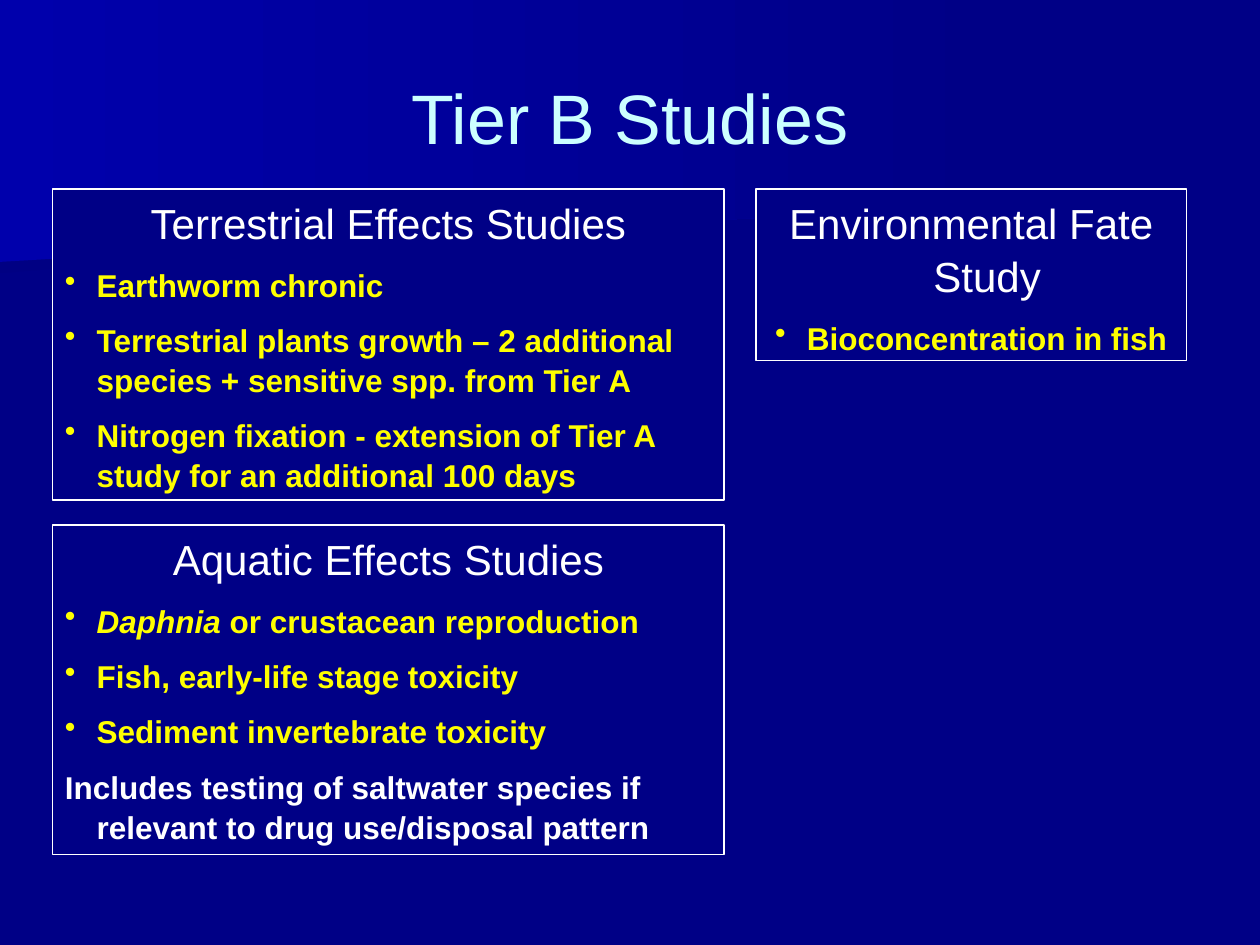
from dataclasses import dataclass

from lxml.etree import SubElement
from pptx import Presentation
from pptx.dml.color import RGBColor
from pptx.enum.shapes import MSO_SHAPE as Shape
from pptx.enum.text import MSO_ANCHOR as Anchor, PP_ALIGN as Align
from pptx.oxml.ns import qn
from pptx.util import Cm, Pt

NAVY, WHITE, YELLOW, CYAN = "000086", "FFFFFF", "FFFF00", "CCFFFF"
HEADING = dict(name="Arial", size=Pt(24), bold=False)
ITEM = dict(name="Arial", size=Pt(18), bold=True)
TITLE = dict(name="Arial", size=Pt(40), bold=False)
INDENT = Cm(0.64)


@dataclass
class Item:
    text: str
    italic: str = ""  # leading words set in italics
    color: str = YELLOW
    bullet: bool = True


@dataclass
class Panel:
    heading: str
    box: tuple[float, float, float, float]
    items: list[Item]
    align: Align = Align.LEFT


@dataclass
class Band:
    points: list[tuple[float, float]]
    start: str


def rgb(color: str) -> RGBColor:
    return RGBColor.from_string(color)


def add_run(p, text: str, fmt: dict, color: str, italic: bool = False) -> None:
    r = p.add_run()
    r.text = text
    for key, value in fmt.items():
        setattr(r.font, key, value)
    r.font.italic = italic
    r.font.color.rgb = rgb(color)


def format_paragraph(p, align: Align, bullet: bool) -> None:
    p.alignment = align
    p.space_before = Pt(9)
    p.line_spacing = 1.05
    pPr = p._p.get_or_add_pPr()
    pPr.set("marL", str(INDENT))
    pPr.set("indent", str(-INDENT))
    if bullet:
        SubElement(pPr, qn("a:buChar")).set("char", "•")
    else:
        SubElement(pPr, qn("a:buNone"))


def add_band(s, band: Band) -> None:
    points = [(Cm(x), Cm(y)) for x, y in band.points]
    builder = s.shapes.build_freeform(*points[0])
    builder.add_line_segments(points[1:], close=True)
    sp = builder.convert_to_shape()
    sp.shadow.inherit = False
    sp.line.fill.background()
    sp.fill.gradient()
    sp.fill.gradient_angle = 0
    for stop, color in zip(sp.fill.gradient_stops, (band.start, NAVY)):
        stop.color.rgb = rgb(color)


def add_panel(s, panel: Panel) -> None:
    sp = s.shapes.add_shape(Shape.RECTANGLE, *map(Cm, panel.box))
    sp.shadow.inherit = False
    sp.fill.solid()
    sp.fill.fore_color.rgb = rgb(NAVY)
    sp.line.color.rgb = rgb(WHITE)
    sp.line.width = Pt(1)
    tf = sp.text_frame
    tf.word_wrap = True
    tf.vertical_anchor = Anchor.TOP

    p = tf.paragraphs[0]
    format_paragraph(p, Align.CENTER, bullet=False)
    add_run(p, panel.heading, HEADING, WHITE)
    for item in panel.items:
        p = tf.add_paragraph()
        format_paragraph(p, panel.align, item.bullet)
        if item.italic:
            add_run(p, item.italic, ITEM, item.color, italic=True)
        add_run(p, item.text, ITEM, item.color)


BANDS = [
    Band([(19.76, 3.89), (0, 5.51), (0, 2.57), (19.79, 2.57)], "000083"),
    Band([(20.12, 4.11), (0, 5.28), (0, 0), (20.12, 0)], "0000AC"),
]
LEFT, TOP, WIDTH = 1.06, 3.81, 13.54
PANELS = [
    Panel("Aquatic Effects Studies", (LEFT, 10.58, WIDTH, 6.65), [
        Item(" or crustacean reproduction", italic="Daphnia"),
        Item("Fish, early-life stage toxicity"),
        Item("Sediment invertebrate toxicity"),
        Item("Includes testing of saltwater species if relevant to drug "
             "use/disposal pattern", color=WHITE, bullet=False),
    ]),
    Panel("Environmental Fate Study", (15.24, TOP, 8.68, 3.46), [
        Item("Bioconcentration in fish"),
    ], Align.CENTER),
    Panel("Terrestrial Effects Studies", (LEFT, TOP, WIDTH, 6.27), [
        Item("Earthworm chronic"),
        Item("Terrestrial plants growth – 2 additional species + sensitive "
             "spp. from Tier A"),
        Item("Nitrogen fixation - extension of Tier A study for an "
             "additional 100 days"),
    ]),
]


def main() -> None:
    prs = Presentation()
    prs.slide_width, prs.slide_height = Cm(25.4), Cm(19.05)
    s = prs.slides.add_slide(prs.slide_layouts[5])

    # Background
    s.background.fill.solid()
    s.background.fill.fore_color.rgb = rgb(NAVY)
    for band in BANDS:
        add_band(s, band)

    # Study panels
    for panel in PANELS:
        add_panel(s, panel)

    # Title, brought to the front
    title = s.shapes.title
    title.left, title.top, title.width, title.height = map(
        Cm, (1.27, 0.76, 22.86, 3.18))
    tf = title.text_frame
    tf.vertical_anchor = Anchor.MIDDLE
    tf.paragraphs[0].alignment = Align.CENTER
    add_run(tf.paragraphs[0], "Tier B Studies", TITLE, CYAN)
    title.element.getparent().append(title.element)

    prs.save("out.pptx")


if __name__ == "__main__":
    main()
